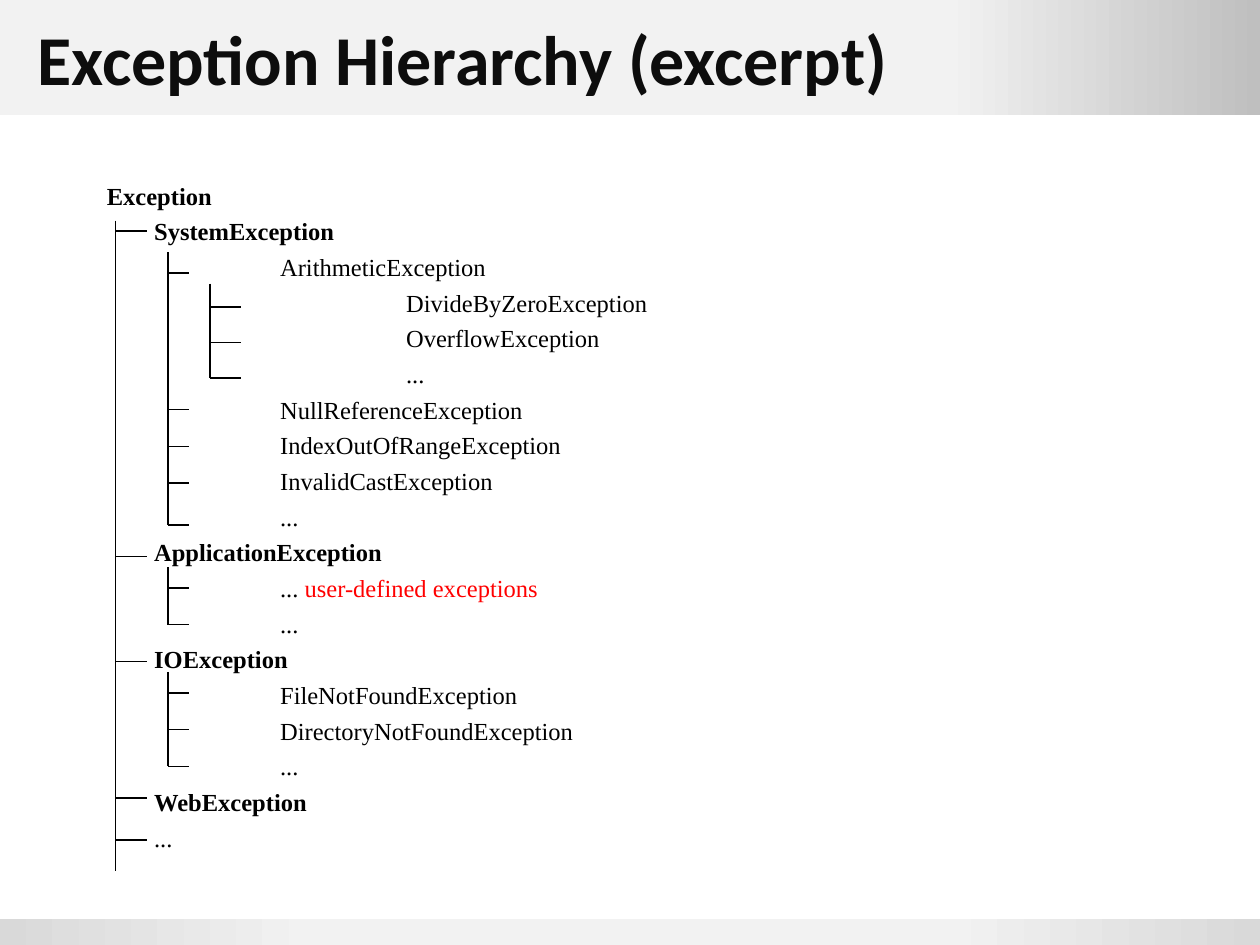
from dataclasses import dataclass

from lxml import etree
from pptx import Presentation
from pptx import util as u
from pptx.dml.color import RGBColor
from pptx.enum import shapes, text
from pptx.oxml.ns import qn

PX = 9525  # EMU per px, 96 px to the inch
PAGE_WIDTH, PAGE_HEIGHT = 960, 720
HEADER_HEIGHT, FOOTER_HEIGHT = 88, 20
BODY_FONT = "Times New Roman"
BLACK, RED = "000000", "FF0000"
LEVEL_INDENTS = (0, 36, 132, 228)


@dataclass(frozen=True)
class Entry:
    level: int
    name: str
    bold: bool = False
    note: str = ""


@dataclass(frozen=True)
class Branch:
    """A vertical trunk with short twigs to its right."""
    x: int
    top: int
    bottom: int
    twig_length: int
    twigs: tuple[int, ...]


ENTRIES = (
    Entry(0, "Exception", bold=True),
    Entry(1, "SystemException", bold=True),
    Entry(2, "ArithmeticException"),
    Entry(3, "DivideByZeroException"),
    Entry(3, "OverflowException"),
    Entry(3, "..."),
    Entry(2, "NullReferenceException"),
    Entry(2, "IndexOutOfRangeException"),
    Entry(2, "InvalidCastException"),
    Entry(2, "..."),
    Entry(1, "ApplicationException", bold=True),
    Entry(2, "... ", note="user-defined exceptions"),
    Entry(2, "..."),
    Entry(1, "IOException", bold=True),
    Entry(2, "FileNotFoundException"),
    Entry(2, "DirectoryNotFoundException"),
    Entry(2, "..."),
    Entry(1, "WebException", bold=True),
    Entry(1, "..."),
)

BRANCHES = (
    Branch(88, 168, 664, 24, (176, 424, 504, 608, 640)),
    Branch(128, 192, 400, 16, (208, 312, 340, 368, 400)),
    Branch(128, 432, 476, 16, (448, 476)),
    Branch(128, 512, 584, 16, (528, 556, 584)),
    Branch(160, 216, 288, 24, (234, 261, 288)),
)


def px(length: int) -> u.Emu:
    return u.Emu(length * PX)


def color(value: str) -> RGBColor:
    return RGBColor.from_string(value)


def add_band(page, top: int, height: int, stops: dict[int, str]) -> None:
    """Add a full-width bar shaded left to right; stops maps percent to colour."""
    band = page.shapes.add_shape(shapes.MSO_SHAPE.RECTANGLE,
                                 0, px(top), px(PAGE_WIDTH), px(height))
    band.shadow.inherit = False
    band.line.fill.background()
    band.fill.gradient()
    band.fill.gradient_angle = 0
    stop_list = band._element.spPr.find(qn("a:gradFill")).find(qn("a:gsLst"))
    for old_stop in list(stop_list):
        stop_list.remove(old_stop)
    for percent, value in stops.items():
        stop = etree.SubElement(stop_list, qn("a:gs"), pos=str(percent * 1000))
        etree.SubElement(stop, qn("a:srgbClr"), val=value)


def add_frame(page, left: int, top: int, width: int, height: int,
              anchor=text.MSO_ANCHOR.TOP):
    box = page.shapes.add_textbox(px(left), px(top), px(width), px(height))
    frame = box.text_frame
    frame.word_wrap = True
    frame.vertical_anchor = anchor
    return frame


def add_span(para, content: str, *, font: str, size: int,
             fill: str = BLACK, bold: bool = False) -> None:
    span = para.add_run()
    span.text = content
    span.font.name = font
    span.font.size = u.Pt(size)
    span.font.bold = bold
    span.font.color.rgb = color(fill)


def add_entries(frame, entries: tuple[Entry, ...]) -> None:
    for index, entry in enumerate(entries):
        para = frame.add_paragraph() if index else frame.paragraphs[0]
        para._p.get_or_add_pPr().set("marL", str(px(LEVEL_INDENTS[entry.level])))
        para.space_before = u.Pt(3.56 if index else 0)
        add_span(para, entry.name, font=BODY_FONT, size=14, bold=entry.bold)
        if entry.note:
            add_span(para, entry.note, font=BODY_FONT, size=14, fill=RED)


def add_line(page, x1: int, y1: int, x2: int, y2: int) -> None:
    line = page.shapes.add_connector(shapes.MSO_CONNECTOR.STRAIGHT,
                                     px(x1), px(y1), px(x2), px(y2))
    line.line.color.rgb = color(BLACK)
    line.line.width = u.Pt(0.75)
    etree.SubElement(line._element.spPr, qn("a:effectLst"))


def add_branch(page, branch: Branch) -> None:
    add_line(page, branch.x, branch.top, branch.x, branch.bottom)
    for y in branch.twigs:
        add_line(page, branch.x, y, branch.x + branch.twig_length, y)


def main() -> None:
    deck = Presentation()
    deck.slide_width, deck.slide_height = px(PAGE_WIDTH), px(PAGE_HEIGHT)
    page = deck.slides.add_slide(deck.slide_layouts[6])

    add_band(page, 0, HEADER_HEIGHT, {75: "F2F2F2", 100: "BFBFBF"})
    add_band(page, PAGE_HEIGHT - FOOTER_HEIGHT, FOOTER_HEIGHT,
             {0: "D9D9D9", 25: "F2F2F2", 75: "F2F2F2", 100: "D9D9D9"})

    title = add_frame(page, 19, 0, 923, HEADER_HEIGHT, text.MSO_ANCHOR.MIDDLE)
    add_span(title.paragraphs[0], "Exception Hierarchy (excerpt)",
             font="Calibri", size=40, fill="0D0D0D", bold=True)

    add_entries(add_frame(page, 72, 133, 864, 544), ENTRIES)
    for branch in BRANCHES:
        add_branch(page, branch)

    deck.save("out.pptx")


if __name__ == "__main__":
    main()
